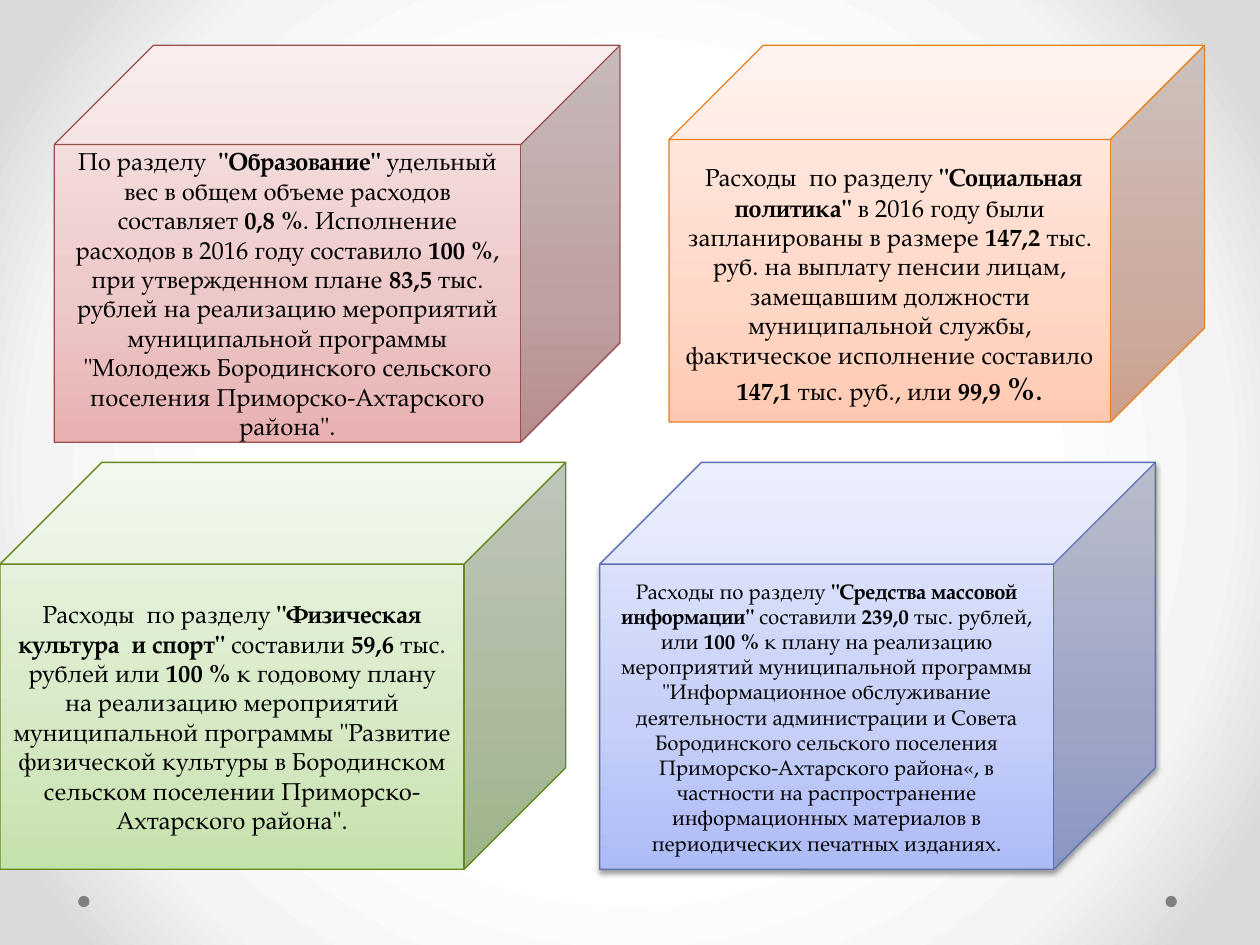
import pptx
import pptx.util
import pptx.oxml
import pptx.oxml.ns
import pptx.dml.color
import pptx.enum.shapes
import pptx.enum.text

Inches = pptx.util.Inches
Pt = pptx.util.Pt
qn = pptx.oxml.ns.qn
KIND = pptx.enum.shapes.MSO_SHAPE
NS = pptx.oxml.ns.nsdecls("a")
FONT = "TeX Gyre Pagella"
RISE = '<a:lin ang="16200000" scaled="0"/>'
ROUND = ('<a:path path="circle"><a:fillToRect l="50000" t="50000" '
         'r="50000" b="50000"/></a:path>')

# Asterisks enclose bold words, tildes enclose large ones.
SCHOOL = (
    'По разделу*  "Образование" *удельный вес в общем объеме расходов '
    'составляет *0,8 %*. Исполнение расходов в 2016 году составило *100 %*, '
    'при утвержденном плане *83,5* тыс. рублей на реализацию мероприятий '
    'муниципальной программы "Молодежь Бородинского сельского поселения '
    'Приморско-Ахтарского района".')
SOCIAL = (
    '~ ~Расходы  по разделу *"Социальная политика" *в 2016 году были '
    'запланированы в размере *147,2* тыс. руб. на выплату пенсии лицам, '
    'замещавшим должности муниципальной службы, фактическое исполнение '
    'составило *147,1 *тыс. руб., или *99,9 ~%~*~.~')
SPORT = (
    'Расходы  по разделу *"Физическая культура  и спорт" *составили '
    '*59,6 *тыс. рублей или *100 %* к годовому плану на реализацию '
    'мероприятий муниципальной программы "Развитие физической культуры в '
    'Бородинском сельском поселении Приморско-Ахтарского района".')
MEDIA = (
    'Расходы по разделу *"Средства массовой информации" *составили *239,0 *'
    'тыс. рублей, или *100 %* к плану на реализацию мероприятий '
    'муниципальной программы "Информационное обслуживание деятельности '
    'администрации и Совета Бородинского сельского поселения '
    'Приморско-Ахтарского района«, в частности на распространение '
    'информационных материалов в периодических печатных изданиях.')


def color(code):
    return pptx.dml.color.RGBColor.from_string(code)


def blend(owner, spots, tints, tail):
    """Fill a shape or background with a gradient of several stops."""
    owner.fill.gradient()
    return (f'<a:gradFill {NS} rotWithShape="1"><a:gsLst>'
            + "".join(f'<a:gs pos="{spot * 1000}"><a:srgbClr val="{tint}"/></a:gs>'
                      for spot, tint in zip(spots, tints))
            + f'</a:gsLst>{tail}</a:gradFill>')


def paint(owner, root, spots, tints, tail):
    """Put the gradient in place of the default one under root."""
    xml = blend(owner, spots, tints, tail)
    old = next(root.iter(qn("a:gradFill")))
    old.getparent().replace(old, pptx.oxml.parse_xml(xml))


def write(shape, text, size=14, large=18, tint="000000"):
    frame = shape.text_frame
    frame.word_wrap = True
    frame.vertical_anchor = pptx.enum.text.MSO_ANCHOR.MIDDLE
    para = frame.paragraphs[0]
    para.alignment = pptx.enum.text.PP_ALIGN.CENTER
    for i, part in enumerate(text.split("*")):
        for j, bit in enumerate(part.split("~")):
            if not bit:
                continue
            run = para.add_run()
            run.text = bit
            run.font.name = FONT
            run.font.size = Pt(large if j % 2 else size)
            run.font.bold = i % 2 == 1
            run.font.color.rgb = color(tint)


def add(slide, kind, box):
    shape = slide.shapes.add_shape(kind, *map(Inches, box))
    shape.shadow.inherit = False
    return shape


def dot(slide, left):
    shape = add(slide, KIND.OVAL, (left, 7.11, 0.09, 0.09))
    shape.fill.solid()
    shape.fill.fore_color.rgb = color("808080")
    shape.line.fill.background()


def cube(slide, box, tints, edge, text, size=14):
    shape = add(slide, KIND.CUBE, box)
    paint(shape, shape.element, (0, 35, 100), tints, RISE)
    shape.line.color.rgb = color(edge)
    shape.line.width = Pt(0.75)
    write(shape, text, size)
    return shape


def shade(shape):
    """Cast a soft shadow straight down."""
    effects = next(shape.element.iter(qn("a:effectLst")))
    effects.append(pptx.oxml.parse_xml(
        f'<a:outerShdw {NS} blurRad="{Pt(3.1)}" dist="{Pt(1.6)}" '
        'dir="5400000" rotWithShape="0"><a:srgbClr val="000000">'
        '<a:alpha val="38000"/></a:srgbClr></a:outerShdw>'))


def main():
    deck = pptx.Presentation()
    deck.slide_width, deck.slide_height = Inches(10), Inches(7.5)
    slide = deck.slides.add_slide(deck.slide_layouts[6])
    paint(slide.background, slide.element, (50, 76, 92),
          ("FFFFFF", "F4F4F4", "DADADA"), ROUND)
    for left in (9.25, 0.62):
        dot(slide, left)
    cube(slide, (0.43, 0.36, 4.49, 3.15),
         ("E8B0B0", "EDC8C8", "F9E9E9"), "9A4E4E", SCHOOL)
    cube(slide, (5.31, 0.36, 4.25, 2.99),
         ("FFC9B1", "FFD8C8", "FFF0EA"), "E6811C", SOCIAL)
    cube(slide, (0, 3.67, 4.49, 3.23),
         ("C5E1AB", "D6E9C5", "EFF7E9"), "62891C", SPORT)
    media = cube(slide, (4.76, 3.67, 4.41, 3.23),
                 ("ADBBF6", "C5CFF8", "E8ECFD"), "5C72B2", MEDIA, size=12)
    shade(media)
    deck.save("out.pptx")


if __name__ == "__main__":
    main()
